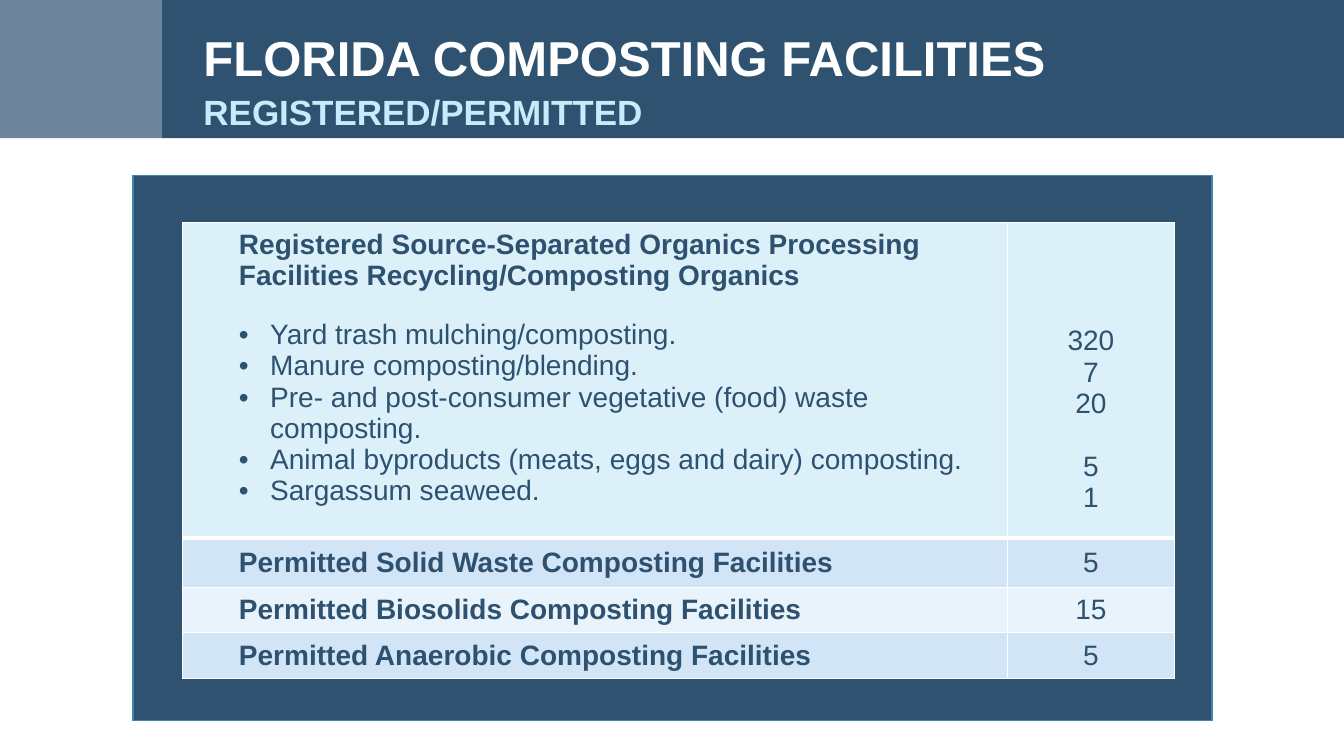
from dataclasses import dataclass

from pptx import Presentation
from pptx.dml.color import RGBColor
from pptx.enum.shapes import MSO_SHAPE
from pptx.enum.text import MSO_ANCHOR, PP_ALIGN
from pptx.oxml.ns import qn
from pptx.oxml.xmlchemy import OxmlElement
from pptx.util import Inches, Pt


@dataclass(frozen=True)
class Theme:
    """Colours, font and type sizes of the slide."""
    navy: str = "2E5270"
    edge: str = "3D86AC"
    ink: str = "2D516F"
    white: str = "FFFFFF"
    sky: str = "C8EAFB"
    first_row: str = "DCF0FA"
    band: str = "D1E5F6"
    pale: str = "E9F3FB"
    font: str = "Arial"
    title: int = 35
    subtitle: int = 25
    body: int = 20


T = Theme()
WIDTH, HEIGHT = Inches(13.33), Inches(7.5)
INSET = 0.06
LINE = 23
COLUMNS = (61.37, 12.45)
FIRST_ROW = 41.67
MATERIALS = [
    ("Yard trash mulching/composting.", "320", 0),
    ("Manure composting/blending.", "7", 0),
    ("Pre- and post-consumer vegetative (food) waste composting.", "20", 0),
    ("Animal byproducts (meats, eggs and dairy) composting.", "5", LINE),
    ("Sargassum seaweed.", "1", 0),
]
PERMITTED = [
    ("Solid Waste", "5", 6.53, T.band),
    ("Biosolids", "15", 6, T.pale),
    ("Anaerobic", "5", 6, T.band),
]


def across(share):
    """Turn a percentage of the slide's width into a length."""
    return round(WIDTH * share / 100)


def down(share):
    """Turn a percentage of the slide's height into a length."""
    return round(HEIGHT * share / 100)


def area(x, y, w, h):
    """Turn four percentages into left, top, width and height."""
    return across(x), down(y), across(w), down(h)


def child(parent, tag, **attrs):
    """Append an XML element with attributes."""
    el = OxmlElement(tag)
    for name, value in attrs.items():
        el.set(name, str(value))
    parent.append(el)
    return el


def write(tf, text, first=False, size=T.body, color=T.ink, bold=False,
          align=PP_ALIGN.LEFT, left=0, hang=0, bullet=None, before=0, spacing=None):
    """Add one formatted paragraph to a text frame."""
    p = tf.paragraphs[0] if first else tf.add_paragraph()
    pPr = p._p.get_or_add_pPr()
    pPr.set("marL", str(Inches(left)))
    pPr.set("indent", str(Inches(-hang)))
    if bullet:
        child(pPr, "a:buFont", typeface=T.font)
        child(pPr, "a:buChar", char=bullet)
    p.level = 1 if left else 0
    p.alignment = align
    if before:
        p.space_before = Pt(before)
    if spacing:
        p.line_spacing = spacing
    r = p.add_run()
    r.text = text
    r.font.name, r.font.size, r.font.bold = T.font, Pt(size), bold
    r.font.color.rgb = RGBColor.from_string(color)


def rect(s, box, line=None, alpha=None):
    """Draw a navy rectangle."""
    sp = s.shapes.add_shape(MSO_SHAPE.RECTANGLE, *area(*box))
    sp.shadow.inherit = False
    sp.fill.solid()
    sp.fill.fore_color.rgb = RGBColor.from_string(T.navy)
    if alpha:
        child(next(sp._element.iter(qn("a:srgbClr"))), "a:alpha", val=alpha * 1000)
    if line:
        sp.line.color.rgb = RGBColor.from_string(line)
        sp.line.width = Pt(1)
    else:
        sp.line.fill.background()


def heading(s, box, text, **fmt):
    """Place a bold one-line heading."""
    tf = s.shapes.add_textbox(*area(*box)).text_frame
    tf.word_wrap = True
    write(tf, text, first=True, bold=True, **fmt)


def style_cell(cell, fill, anchor=MSO_ANCHOR.MIDDLE, top=INSET, bottom_line=1):
    """Set a cell's margins, white borders and fill, and return its text frame."""
    cell.margin_left = cell.margin_right = cell.margin_bottom = Inches(INSET)
    cell.margin_top = Inches(top)
    cell.vertical_anchor = anchor
    tcPr = cell._tc.get_or_add_tcPr()
    for side, width in zip("LRTB", (1, 1, 1, bottom_line)):
        ln = child(tcPr, f"a:ln{side}", w=Pt(width))
        child(child(ln, "a:solidFill"), "a:srgbClr", val=T.white)
    cell.fill.solid()
    cell.fill.fore_color.rgb = RGBColor.from_string(fill)
    return cell.text_frame


def registered_row(table):
    """Fill the row of registered facilities and their counts."""
    look = dict(fill=T.first_row, anchor=MSO_ANCHOR.TOP, bottom_line=3)
    names = style_cell(table.cell(0, 0), **look)
    counts = style_cell(table.cell(0, 1), top=INSET + 3 * LINE / 72, **look)
    write(names, "Registered Source-Separated Organics Processing Facilities "
          "Recycling/Composting Organics", first=True, bold=True, left=0.5)
    for i, (name, count, gap) in enumerate(MATERIALS):
        write(names, name, left=0.81, hang=0.31, bullet="•", before=0 if i else 20)
        write(counts, count, first=i == 0, align=PP_ALIGN.CENTER, before=gap)


def facilities_table(s, x, y):
    """Build the table of facilities."""
    heights = [FIRST_ROW] + [row[2] for row in PERMITTED]
    box = area(x, y, sum(COLUMNS), sum(heights))
    table = s.shapes.add_table(len(heights), len(COLUMNS), *box).table
    table.first_row = table.horz_banding = False
    for column, share in zip(table.columns, COLUMNS):
        column.width = across(share)
    for row, share in zip(table.rows, heights):
        row.height = down(share)
    registered_row(table)
    for i, (kind, count, _, fill) in enumerate(PERMITTED, 1):
        write(style_cell(table.cell(i, 0), fill),
              f"Permitted {kind} Composting Facilities", first=True, bold=True, left=0.5)
        write(style_cell(table.cell(i, 1), fill), count, first=True, align=PP_ALIGN.CENTER)


def main():
    """Build and save the slide."""
    prs = Presentation()
    prs.slide_width, prs.slide_height = WIDTH, HEIGHT
    s = prs.slides.add_slide(prs.slide_layouts[6])
    rect(s, (12.06, 0, 87.94, 18.27))
    rect(s, (0, 0, 12.06, 18.27), alpha=70)
    rect(s, (9.9, 23.2, 80.27, 72.13), line=T.edge)
    heading(s, (14.4, 0, 80.87, 11.2), "FLORIDA COMPOSTING FACILITIES",
            size=T.title, color=T.white, spacing=1.39)
    facilities_table(s, 13.58, 29.47)
    heading(s, (14.4, 8.27, 74.42, 9.07), "REGISTERED/PERMITTED",
            size=T.subtitle, color=T.sky, spacing=1.54)
    prs.save("out.pptx")


if __name__ == "__main__":
    main()
